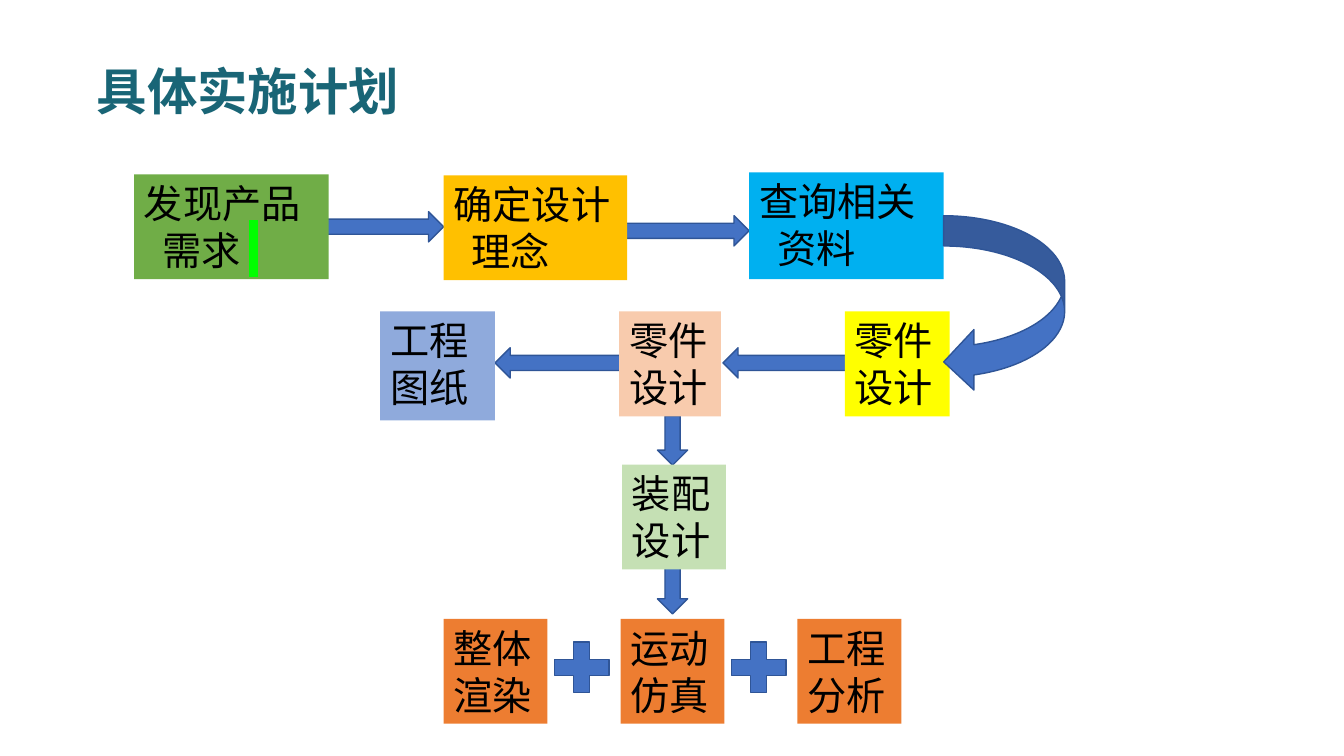
"""Builds the implementation plan slide, a flow of design steps."""
import lxml.etree
import pptx
import pptx.dml.color
import pptx.enum.shapes
import pptx.enum.text
import pptx.oxml.ns
import pptx.util

Inches = pptx.util.Inches
SHAPES = pptx.enum.shapes.MSO_SHAPE
ALIGN = pptx.enum.text.PP_ALIGN
qn = pptx.oxml.ns.qn

FONT = "Noto Sans CJK SC"
COLORS = {
    "title": "196576", "text": "000000", "mark": "00FF00",
    "arrow": "4472C4", "outline": "2F5597",
    "need": "70AD47", "concept": "FFC000", "research": "00B0F0",
    "part": "FFFF00", "part_review": "F8CBAD", "drawing": "8FAADC",
    "assembly": "C5E0B4", "result": "ED7D31",
}
TITLE = ("具体实施计划", (0.86, 0.55, 3.35, 0.71))
SECOND_LINE_INDENT = 0.18
STEPS = [
    (["发现产品", "需求 "], "need", (1.33, 1.73, 1.93, 1.04), SECOND_LINE_INDENT, " "),
    (["确定设计", "理念"], "concept", (4.4, 1.74, 1.82, 1.04), SECOND_LINE_INDENT, ""),
    (["查询相关", "资料"], "research", (7.43, 1.71, 1.93, 1.06), SECOND_LINE_INDENT, ""),
    (["零件", "设计"], "part", (8.38, 3.09, 1.04, 1.04), 0, ""),
    (["工程", "图纸"], "drawing", (3.77, 3.09, 1.14, 1.08), 0, ""),
    (["零件", "设计"], "part_review", (6.14, 3.09, 1.01, 1.04), 0, ""),
    (["装配", "设计"], "assembly", (6.17, 4.61, 1.03, 1.04), 0, ""),
]
RESULTS = ["整体渲染", "运动仿真", "工程分析"]
RESULT_LEFT, RESULT_TOP, RESULT_PITCH = 4.4, 6.14, 1.755
RESULT_SIZE = (1.03, 1.04)
PLUS_LEFT, PLUS_TOP, PLUS_SIZE = 5.4, 6.28, (0.74, 0.68)
ARROW_THICKNESS = 0.3
ARROWS = [
    ((3.77, 2.25), 1.26, 0),
    ((6.8, 2.29), 1.26, 0),
    ((5.54, 3.6), 1.26, 180),
    ((7.8, 3.6), 1.26, 180),
    ((6.67, 4.37), 0.49, 90),
    ((6.67, 5.79), 0.6, 90),
]
RETURN_ARROW = (9.36, 2.14, 1.2, 1.75)


def rgb(name):
    return pptx.dml.color.RGBColor.from_string(COLORS[name])


def add_run(paragraph, text, size, color, bold, mark=None):
    run = paragraph.add_run()
    run.text = text
    run.font.size = pptx.util.Pt(size)
    run.font.bold = bold
    run.font.color.rgb = rgb(color)
    run.font.name = FONT
    properties = run.font._element
    properties.find(qn("a:latin")).addnext(
        lxml.etree.Element(qn("a:ea"), typeface=FONT))
    if mark:
        highlight = lxml.etree.Element(qn("a:highlight"))
        lxml.etree.SubElement(highlight, qn("a:srgbClr"), val=COLORS[mark])
        properties.find(qn("a:solidFill")).addnext(highlight)


def write(shape, lines, size=28, color="text", bold=False,
          align=ALIGN.LEFT, indent=0, marked=""):
    frame = shape.text_frame
    frame.word_wrap = True
    frame.vertical_anchor = pptx.enum.text.MSO_ANCHOR.TOP
    for number, line in enumerate(lines):
        paragraph = frame.add_paragraph() if number else frame.paragraphs[0]
        paragraph.alignment = align
        if number and indent:
            paragraph._p.get_or_add_pPr().set("marL", str(Inches(indent)))
        add_run(paragraph, line, size, color, bold)
    if marked:
        add_run(paragraph, marked, size, color, bold, mark="mark")


def add_block(slide, kind, box, fill, outline=None, rotation=0):
    shape = slide.shapes.add_shape(kind, *map(Inches, box))
    shape.shadow.inherit = False
    shape.rotation = rotation
    shape.fill.solid()
    shape.fill.fore_color.rgb = rgb(fill)
    if outline:
        shape.line.color.rgb = rgb(outline)
        shape.line.width = pptx.util.Pt(1)
    else:
        shape.line.fill.background()
    return shape


def main():
    deck = pptx.Presentation()
    deck.slide_width, deck.slide_height = Inches(13.33), Inches(7.5)
    slide = deck.slides.add_slide(deck.slide_layouts[6])

    heading, box = TITLE
    write(slide.shapes.add_textbox(*map(Inches, box)), [heading],
          size=36, color="title", bold=True, align=ALIGN.JUSTIFY)

    for (x, y), length, rotation in ARROWS:
        box = (x - length / 2, y - ARROW_THICKNESS / 2, length, ARROW_THICKNESS)
        add_block(slide, SHAPES.RIGHT_ARROW, box, "arrow", "outline", rotation)

    for lines, fill, box, indent, marked in STEPS:
        step = add_block(slide, SHAPES.RECTANGLE, box, fill)
        write(step, lines, indent=indent, marked=marked)

    for column, result in enumerate(RESULTS):
        offset = column * RESULT_PITCH
        box = (RESULT_LEFT + offset, RESULT_TOP, *RESULT_SIZE)
        write(add_block(slide, SHAPES.RECTANGLE, box, "result"), [result])
        if column < len(RESULTS) - 1:
            box = (PLUS_LEFT + offset, PLUS_TOP, *PLUS_SIZE)
            add_block(slide, SHAPES.MATH_PLUS, box, "arrow", "outline")

    add_block(slide, SHAPES.CURVED_LEFT_ARROW, RETURN_ARROW, "arrow", "outline")
    deck.save("out.pptx")


if __name__ == "__main__":
    main()
